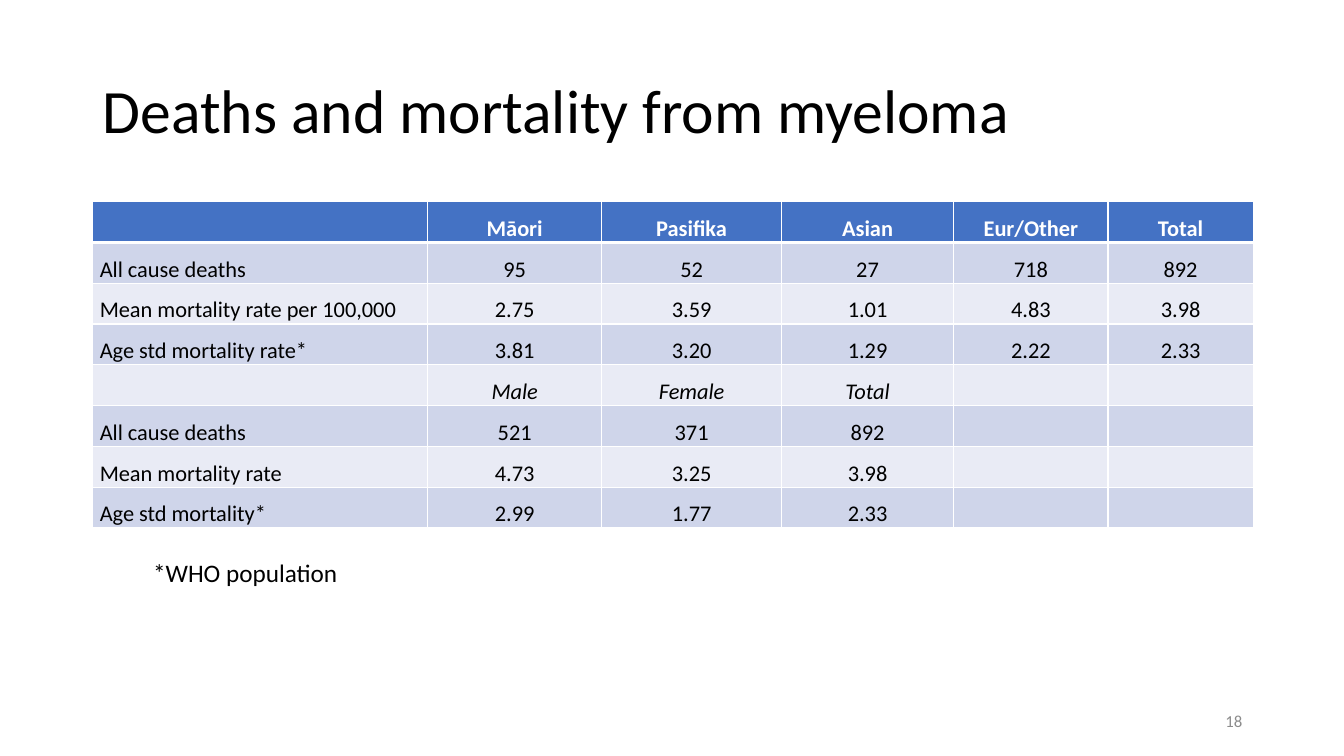
"""Build the slide on deaths and mortality from myeloma."""
from lxml import etree
from pptx import Presentation
from pptx.dml.color import RGBColor
from pptx.enum.text import MSO_ANCHOR, MSO_AUTO_SIZE, PP_ALIGN
from pptx.oxml.ns import qn
from pptx.util import Inches, Pt

LEFT, CENTER, RIGHT = PP_ALIGN.LEFT, PP_ALIGN.CENTER, PP_ALIGN.RIGHT
TOP, MIDDLE, BOTTOM = MSO_ANCHOR.TOP, MSO_ANCHOR.MIDDLE, MSO_ANCHOR.BOTTOM
NO_FIT = MSO_AUTO_SIZE.NONE
GROW = MSO_AUTO_SIZE.SHAPE_TO_FIT_TEXT

BLACK = RGBColor(0x00, 0x00, 0x00)
WHITE = RGBColor(0xFF, 0xFF, 0xFF)
GRAY = RGBColor(0x8C, 0x8C, 0x8C)
BLUE = RGBColor(0x44, 0x72, 0xC4)
BAND_DARK = RGBColor(0xCF, 0xD5, 0xEA)
BAND_LIGHT = RGBColor(0xE9, 0xEB, 0xF5)

COL_WIDTHS = [3.32, 1.73, 1.78, 1.71, 1.53, 1.44]
SEX_ROW = 4
ROWS = [
    ["", "Māori", "Pasifika", "Asian", "Eur/Other", "Total"],
    ["All cause deaths", "95", "52", "27", "718", "892"],
    ["Mean mortality rate per 100,000", "2.75", "3.59", "1.01", "4.83", "3.98"],
    ["Age std mortality rate*", "3.81", "3.20", "1.29", "2.22", "2.33"],
    ["", "Male", "Female", "Total", "", ""],
    ["All cause deaths", "521", "371", "892", "", ""],
    ["Mean mortality rate", "4.73", "3.25", "3.98", "", ""],
    ["Age std mortality*", "2.99", "1.77", "2.33", "", ""],
]


class SlideBuilder:
    """Hold the font and the current slide, and add each kind of element."""

    def __init__(self, s, font="Calibri"):
        self.s = s
        self.font = font

    def set_text(self, tf, text, size, color, align=LEFT, bold=False, italic=False):
        """Set and format the text of a frame, and return its paragraph."""
        tf.text = text
        p = tf.paragraphs[0]
        p.alignment = align
        for r in p.runs:
            r.font.name = self.font
            r.font.size = Pt(size)
            r.font.bold = bold
            r.font.italic = italic
            r.font.color.rgb = color
        return p

    def title(self, text, left, top, width, height):
        """Place and format the title placeholder."""
        sp = self.s.shapes.title
        sp.left, sp.top = Inches(left), Inches(top)
        sp.width, sp.height = Inches(width), Inches(height)
        tf = sp.text_frame
        tf.auto_size = NO_FIT
        tf.vertical_anchor = MIDDLE
        self.set_text(tf, text, 44, BLACK).line_spacing = 0.9

    def text(self, text, left, top, width, height, size, color,
             align=LEFT, anchor=TOP, wrap=True, fit=NO_FIT):
        """Add a text box."""
        sp = self.s.shapes.add_textbox(
            Inches(left), Inches(top), Inches(width), Inches(height))
        tf = sp.text_frame
        tf.word_wrap = wrap
        tf.auto_size = fit
        tf.vertical_anchor = anchor
        self.set_text(tf, text, size, color, align)

    def border(self, cell, side, width):
        """Draw one white cell border."""
        ln = etree.SubElement(cell._tc.get_or_add_tcPr(), qn(f"a:ln{side}"),
                              w=str(Pt(width)))
        fill = etree.SubElement(ln, qn("a:solidFill"))
        etree.SubElement(fill, qn("a:srgbClr"), val=str(WHITE))

    def cell(self, cell, text, row, col):
        """Format one table cell by its row and column."""
        header = row == 0
        for side in "LRTB":
            thick = (header and side == "B") or (row == 1 and side == "T")
            self.border(cell, side, 3 if thick else 1)
        cell.fill.solid()
        band = BAND_DARK if row % 2 else BAND_LIGHT
        cell.fill.fore_color.rgb = BLUE if header else band
        cell.vertical_anchor = BOTTOM
        cell.margin_left = cell.margin_right = Inches(0.07)
        cell.margin_top = cell.margin_bottom = 0
        p = self.set_text(cell.text_frame, text, 16, WHITE if header else BLACK,
                          CENTER if col else LEFT, header, row == SEX_ROW)
        p.line_spacing = 1.07
        p.space_before = p.space_after = Pt(2)

    def table(self, rows, widths, left, top, width, height):
        """Add a banded table."""
        table = self.s.shapes.add_table(
            len(rows), len(widths), Inches(left), Inches(top),
            Inches(width), Inches(height)).table
        for column, col_width in zip(table.columns, widths):
            column.width = Inches(col_width)
        for i, row in enumerate(rows):
            for j, text in enumerate(row):
                self.cell(table.cell(i, j), text, i, j)


def main():
    """Build and save the slide."""
    prs = Presentation()
    prs.slide_width, prs.slide_height = Inches(13.33), Inches(7.5)
    b = SlideBuilder(prs.slides.add_slide(prs.slide_layouts[5]))
    b.title("Deaths and mortality from myeloma", 0.92, 0.4, 11.5, 1.45)
    b.table(ROWS, COL_WIDTHS, 0.92, 2, 11.5, 3.24)
    b.text("18", 9.42, 6.95, 3, 0.4, 12, GRAY, RIGHT, MIDDLE)
    b.text("*WHO population", 1.42, 5.48, 2.11, 0.4, 18, BLACK,
           wrap=False, fit=GROW)
    prs.save("out.pptx")


if __name__ == "__main__":
    main()
